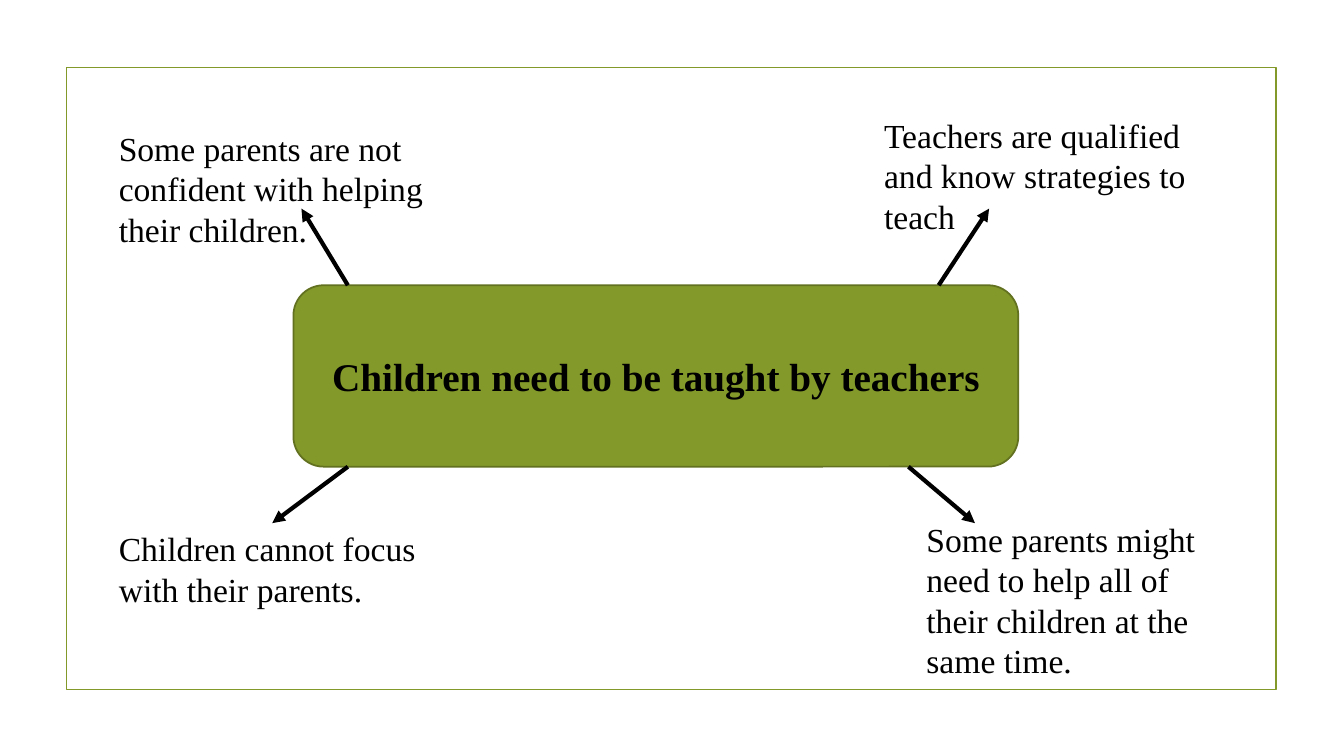
import pptx
import pptx.dml.color
import pptx.enum.shapes
import pptx.enum.text
import pptx.oxml
import pptx.util
from pptx.util import Inches

GREEN = pptx.dml.color.RGBColor(0x83, 0x99, 0x2A)
DARK_GREEN = pptx.dml.color.RGBColor(0x61, 0x71, 0x1F)
BLACK = pptx.dml.color.RGBColor(0, 0, 0)
FONT = "Times New Roman"
SHAPES = pptx.enum.shapes.MSO_SHAPE
ALIGN = pptx.enum.text.PP_ALIGN

REASONS = [
    ("Some parents are not confident with helping their children.",
     (1.08, 1.22, 3.24, 1.31), (3.45, 2.83), (2.99, 2.07)),
    ("Teachers are qualified and know strategies to teach",
     (8.67, 1.09, 3.24, 1.31), (9.31, 2.83), (9.81, 2.07)),
    ("Children cannot focus with their parents.",
     (1.08, 5.19, 3.24, 0.91), (3.45, 4.63), (2.7, 5.19)),
    ("Some parents might need to help all of their children at the same time.",
     (9.09, 5.1, 3.24, 1.72), (9.01, 4.63), (9.67, 5.19)),
]


def add_panel(slide, kind, box, line_color, fill_color=None):
    shape = slide.shapes.add_shape(kind, *map(Inches, box))
    shape.shadow.inherit = False
    if fill_color is None:
        shape.fill.background()
    else:
        shape.fill.solid()
        shape.fill.fore_color.rgb = fill_color
    shape.line.color.rgb = line_color
    shape.line.width = pptx.util.Pt(1.25)


def add_text(slide, text, box, size, bold=False, alignment=ALIGN.LEFT):
    frame = slide.shapes.add_textbox(*map(Inches, box)).text_frame
    frame.word_wrap = True
    frame.auto_size = pptx.enum.text.MSO_AUTO_SIZE.SHAPE_TO_FIT_TEXT
    paragraph = frame.paragraphs[0]
    paragraph.alignment = alignment
    run = paragraph.add_run()
    run.text = text
    run.font.name = FONT
    run.font.size = pptx.util.Pt(size)
    run.font.bold = bold
    run.font.color.rgb = BLACK


def add_arrow(slide, start, end):
    connector = slide.shapes.add_connector(
        pptx.enum.shapes.MSO_CONNECTOR.STRAIGHT, *map(Inches, start + end))
    connector.line.color.rgb = BLACK
    connector.line.width = pptx.util.Pt(3)
    namespace = pptx.oxml.ns.nsdecls("a")
    connector.line._get_or_add_ln().append(
        pptx.oxml.parse_xml(f'<a:tailEnd {namespace} type="triangle"/>'))
    connector._element.spPr.append(
        pptx.oxml.parse_xml(f"<a:effectLst {namespace}/>"))


def main():
    presentation = pptx.Presentation()
    presentation.slide_width = Inches(13.33)
    presentation.slide_height = Inches(7.5)
    slide = presentation.slides.add_slide(presentation.slide_layouts[6])
    add_panel(slide, SHAPES.RECTANGLE, (0.66, 0.67, 12, 6.17), GREEN)
    add_panel(slide, SHAPES.ROUNDED_RECTANGLE, (2.91, 2.83, 7.19, 1.8),
              DARK_GREEN, GREEN)
    add_text(slide, "Children need to be taught by teachers",
             (2.91, 3.45, 7.19, 0.57), 28, True, ALIGN.CENTER)
    for text, box, start, end in REASONS:
        add_text(slide, text, box, 24)
        add_arrow(slide, start, end)
    presentation.save("out.pptx")


if __name__ == "__main__":
    main()
